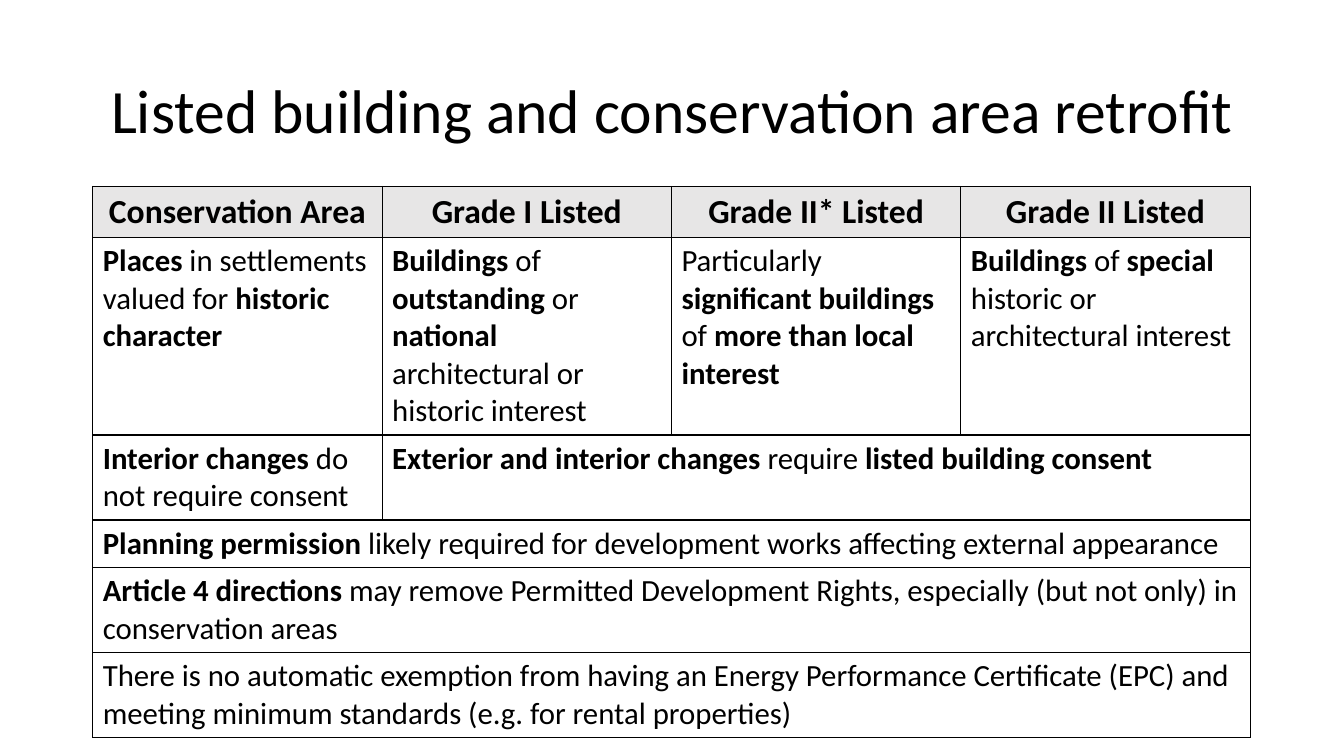
from dataclasses import dataclass

from lxml import etree
from pptx import Presentation
from pptx.dml.color import RGBColor
from pptx.enum.text import MSO_ANCHOR, PP_ALIGN
from pptx.oxml.ns import qn
from pptx.table import Table, _Cell
from pptx.text.text import Font, TextFrame
from pptx.util import Inches, Pt

CENTER, LEFT = PP_ALIGN.CENTER, PP_ALIGN.LEFT
MIDDLE = MSO_ANCHOR.MIDDLE
FONT = "Calibri"
BLACK, WHITE, GREY = "000000", "FFFFFF", "E7E6E6"
TITLE_ONLY = 5
COLS, COL_W = 4, 2.87
LINE_H, PAD = 0.37, 0.1


@dataclass
class Row:
    texts: list[str]  # bars switch bold on and off
    lines: int = 1
    head: bool = False


ROWS = [
    Row(["|Conservation Area|", "|Grade I Listed|", "|Grade II* Listed|",
         "|Grade II Listed|"], head=True),
    Row(["|Places| in settlements valued for |historic character|",
         "|Buildings| of |outstanding| or |national| architectural or "
         "historic interest",
         "Particularly |significant buildings| of |more than local interest|",
         "|Buildings| of |special |historic or architectural interest"],
        lines=5),
    Row(["|Interior changes |do not require consent",
         "|Exterior and interior changes |require |listed building consent|"],
        lines=2),
    Row(["|Planning permission| likely required for development works "
         "affecting external appearance"]),
    Row(["|Article 4 directions |may remove Permitted Development Rights, "
         "especially (but not only) in conservation areas"], lines=2),
    Row(["There is no automatic exemption from having an Energy Performance "
         "Certificate (EPC) and meeting minimum standards (e.g. for rental "
         "properties)"], lines=2),
]


def rgb(code: str) -> RGBColor:
    return RGBColor.from_string(code)


def style(font: Font, size: float, bold: bool, color: str) -> None:
    font.name = FONT
    font.size = Pt(size)
    font.bold = bold
    font.color.rgb = rgb(color)


def write(frame: TextFrame, text: str, *, size: float = 22,
          align: PP_ALIGN = LEFT, color: str = BLACK,
          space: float = 1.0) -> None:
    par = frame.paragraphs[0]
    par.alignment = align
    par.line_spacing = space
    for i, part in enumerate(text.split("|")):
        if part:
            run = par.add_run()
            run.text = part
            style(run.font, size, i % 2 == 1, color)


def border(cell: _Cell, color: str = BLACK, width: float = 1) -> None:
    props = cell._tc.get_or_add_tcPr()
    for side in ("lnL", "lnR", "lnT", "lnB"):
        line = etree.SubElement(props, qn(f"a:{side}"), w=str(Pt(width)))
        fill = etree.SubElement(line, qn("a:solidFill"))
        etree.SubElement(fill, qn("a:srgbClr"), val=color)


def fill_row(table: Table, top: int, row: Row) -> None:
    size = 24 if row.head else 22
    height = size / 22 * LINE_H * row.lines + PAD
    table.rows[top].height = Inches(round(height, 2))
    for col in range(COLS):
        cell = table.cell(top, col)
        border(cell)
        cell.fill.solid()
        cell.fill.fore_color.rgb = rgb(GREY if row.head else WHITE)
    # The last text of a short row spans the columns left over
    last = len(row.texts) - 1
    if last < COLS - 1:
        table.cell(top, last).merge(table.cell(top, COLS - 1))
    for col, text in enumerate(row.texts):
        write(table.cell(top, col).text_frame, text, size=size,
              align=CENTER if row.head else LEFT)


def main() -> None:
    deck = Presentation()
    deck.slide_width, deck.slide_height = Inches(13.33), Inches(7.5)
    slide = deck.slides.add_slide(deck.slide_layouts[TITLE_ONLY])

    # Title
    title = slide.shapes.title
    title.left, title.top = Inches(0.92), Inches(0.4)
    title.width, title.height = Inches(11.5), Inches(1.45)
    title.text_frame.vertical_anchor = MIDDLE
    write(title.text_frame, "Listed building and conservation area retrofit",
          size=44, align=CENTER, space=0.9)

    # Table
    table = slide.shapes.add_table(
        len(ROWS), COLS, Inches(0.92), Inches(1.85),
        Inches(COLS * COL_W), Inches(5.4)).table
    table.first_row = table.horz_banding = False
    for col in table.columns:
        col.width = Inches(COL_W)
    for top, row in enumerate(ROWS):
        fill_row(table, top, row)

    deck.save("out.pptx")


if __name__ == "__main__":
    main()
